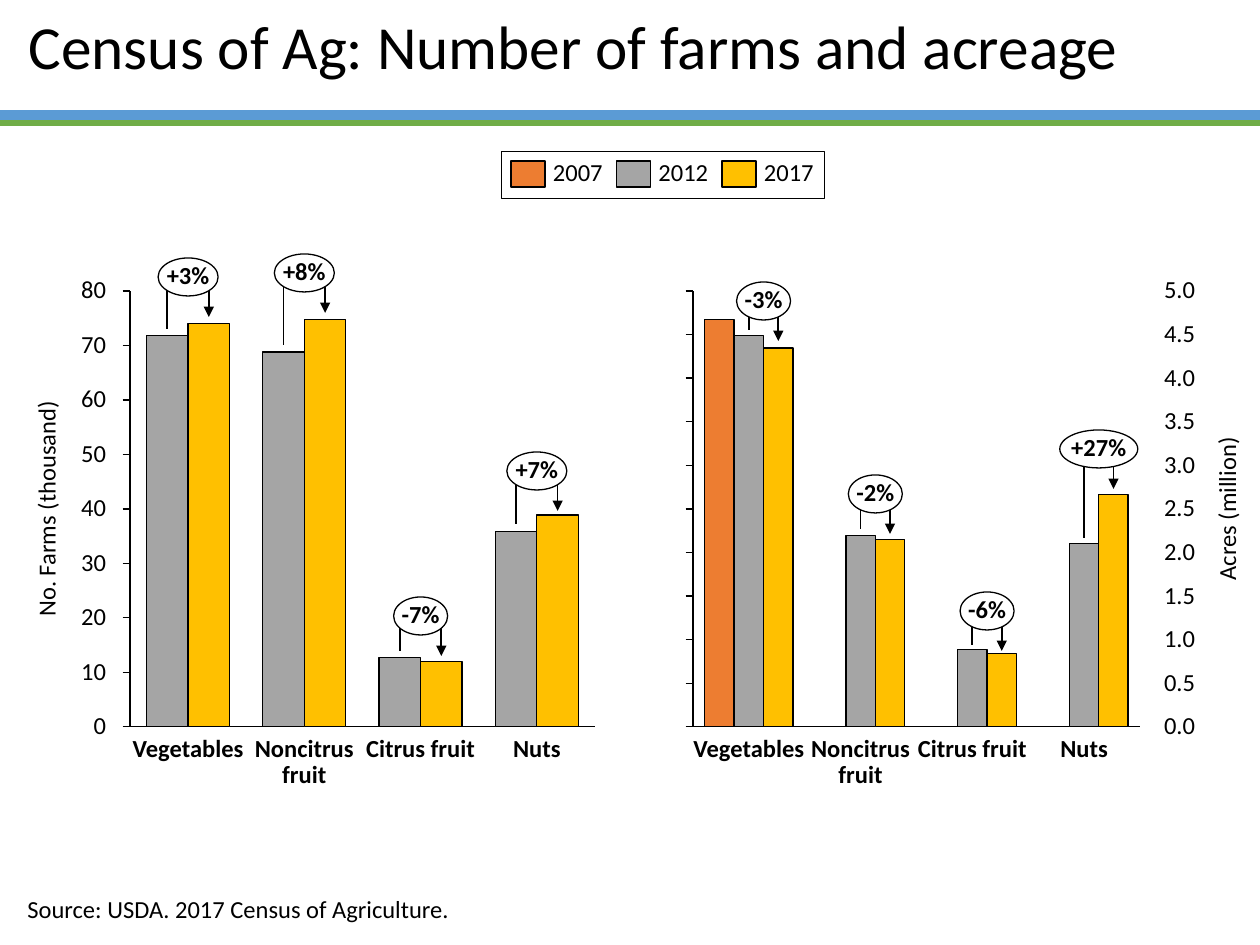
from lxml import etree
from pptx import Presentation
from pptx.chart.data import CategoryChartData
from pptx.dml.color import RGBColor
from pptx.enum.chart import XL_AXIS_CROSSES, XL_CHART_TYPE, XL_TICK_LABEL_POSITION, XL_TICK_MARK
from pptx.enum.shapes import MSO_CONNECTOR, MSO_SHAPE
from pptx.enum.text import MSO_ANCHOR, MSO_AUTO_SIZE, PP_ALIGN
from pptx.oxml.ns import qn
from pptx.util import Pt

LEFT, MID, RIGHT = PP_ALIGN.LEFT, PP_ALIGN.CENTER, PP_ALIGN.RIGHT
TOP, CENTER, BOTTOM = MSO_ANCHOR.TOP, MSO_ANCHOR.MIDDLE, MSO_ANCHOR.BOTTOM
RECT, OVAL = MSO_SHAPE.RECTANGLE, MSO_SHAPE.OVAL
STRAIGHT = MSO_CONNECTOR.STRAIGHT
COLUMN = XL_CHART_TYPE.COLUMN_CLUSTERED
OUT, NONE = XL_TICK_MARK.OUTSIDE, XL_TICK_MARK.NONE
HIDE = XL_TICK_LABEL_POSITION.NONE
FAR = XL_AXIS_CROSSES.MAXIMUM
FIXED = MSO_AUTO_SIZE.NONE

PX = 914400 / 126
INK = {"black": "000000", "white": "FFFFFF", "blue": "5B9BD5", "green": "70AD47",
       "2007": "ED7D31", "2012": "A5A5A5", "2017": "FFC000"}
CROPS = ["Vegetables", "Noncitrus fruit", "Citrus fruit", "Nuts"]
PEAK = 107

FARMS = {
    "series": {"2012": [96, 92, 17, 48], "2017": [99, 100, 16, 52]},
    "major": 13.37, "far": False, "unit": "No. Farms (thousand)",
    "ticks": [str(n) for n in range(0, 90, 10)],
    "calls": [("+3%", 60, 277, 329), ("+8%", 60, 273, 345),
              ("-7%", 54, 616, 651), ("+7%", 60, 471, 524)]}
ACRES = {
    "series": {"2007": [100, None, None, None], "2012": [96, 47, 19, 45],
               "2017": [93, 46, 18, 57]},
    "major": 10.7, "far": True, "unit": "Acres (million)",
    "ticks": [f"{n / 2:.1f}" for n in range(11)],
    "calls": [("-3%", 54, 301, 330), ("-2%", 54, 494, 529),
              ("-6%", 54, 611, 645), ("+27%", 78, 449, 538)]}


def emu(*nums):
    return [round(n * PX) for n in nums]


def rgb(name):
    return RGBColor.from_string(INK[name])


def put(item, vals):
    for key, val in vals.items():
        setattr(item, key, val)


def ink(font, size=14, bold=False):
    put(font, {"name": "Calibri", "size": Pt(size), "bold": bold})
    font.color.rgb = rgb("black")


def edge(line, width=0.75, color="black"):
    line.color.rgb = rgb(color)
    line.width = Pt(width)


def write(shape, text, align=MID, anchor=CENTER, bold=False, wrap=False, pad=0, lead=0.9):
    frame = shape.text_frame
    put(frame, {"text": text, "word_wrap": wrap, "vertical_anchor": anchor,
                **{f"margin_{side}": Pt(pad) for side in ("left", "right")},
                **{f"margin_{side}": Pt(pad / 2) for side in ("top", "bottom")}})
    para = frame.paragraphs[0]
    put(para, {"alignment": align, "line_spacing": lead})
    ink(para.runs[0].font, bold=bold)
    return frame


def label(slide, box, text, **form):
    return write(slide.shapes.add_textbox(*emu(*box)), text, **form)


def block(slide, kind, box, fill=None, width=0.75):
    shape = slide.shapes.add_shape(kind, *emu(*box))
    shape.shadow.inherit = False
    if fill:
        shape.fill.solid()
        shape.fill.fore_color.rgb = rgb(fill)
    else:
        shape.fill.background()
    edge(shape.line, width)
    return shape


def rule(slide, ends, width=1, color="black", arrow=False):
    link = slide.shapes.add_connector(STRAIGHT, *emu(*ends))
    edge(link.line, width, color)
    if arrow:
        etree.SubElement(link.line._get_or_add_ln(), qn("a:tailEnd"), type="triangle")
    etree.SubElement(link._element.spPr, qn("a:effectLst"))


def head(slide, box):
    title = slide.shapes.title
    put(title, dict(zip(("left", "top", "width", "height"), emu(*box))))
    frame = title.text_frame
    put(frame, {"text": "Census of Ag: Number of farms and acreage",
                "auto_size": FIXED, "vertical_anchor": CENTER})
    para = frame.paragraphs[0]
    put(para, {"alignment": LEFT, "line_spacing": 0.9})
    ink(para.runs[0].font, 35)
    for y, width, color in ((115, 6, "blue"), (123, 3, "green")):
        rule(slide, (-1, y, 1262, y), width, color)


def key(slide, box):
    x, y, w, h = box
    block(slide, RECT, box, width=0.25)
    for i, year in enumerate(("2007", "2012", "2017")):
        left = x + 10 + i * 105.5
        block(slide, RECT, (left, y + 10, 34, 26), year)
        label(slide, (left + 42, y + 10, 50, 26), year, align=LEFT)


def inset(chart, box, plot):
    area = chart._chartSpace.chart.plotArea
    for old in area.findall(qn("c:layout")):
        area.remove(old)
    lay = etree.Element(qn("c:layout"))
    area.insert(0, lay)
    hand = etree.SubElement(lay, qn("c:manualLayout"))
    x, y, w, h = box
    share = [(plot[0] - x) / w, (plot[1] - y) / h, plot[2] / w, plot[3] / h]
    parts = [("layoutTarget", "inner"), ("xMode", "edge"), ("yMode", "edge")]
    parts += [(tag, f"{val:.4f}") for tag, val in zip("xywh", share)]
    for tag, val in parts:
        etree.SubElement(hand, qn(f"c:{tag}"), val=val)


def bars(slide, plot, info):
    x, y, w, h = plot
    box = (x - 11, y - 11, w + 22, h + 23)
    data = CategoryChartData()
    data.categories = ["1", "2", "3", "4"]
    for year, vals in info["series"].items():
        data.add_series(year, vals)
    chart = slide.shapes.add_chart(COLUMN, *emu(*box), data).chart
    put(chart, {"has_legend": False, "has_title": False})
    ink(chart.font, 10)
    group = chart.plots[0]
    put(group, {"gap_width": 80, "overlap": 0, "vary_by_categories": False})
    for item in group.series:
        item.format.fill.solid()
        item.format.fill.fore_color.rgb = rgb(item.name)
        edge(item.format.line)
    cat, val = chart.category_axis, chart.value_axis
    for axis, tick in ((cat, NONE), (val, OUT)):
        put(axis, {"has_major_gridlines": False, "major_tick_mark": tick,
                   "minor_tick_mark": NONE, "tick_label_position": HIDE})
        edge(axis.format.line)
    put(val, {"minimum_scale": 0, "maximum_scale": PEAK, "major_unit": info["major"]})
    if info["far"]:
        cat.crosses = FAR
    inset(chart, box, plot)


def scale(slide, plot, info):
    x, y, w, h = plot
    far = info["far"]
    left, align = (x + w + 24, LEFT) if far else (x - 56, RIGHT)
    step = h / (len(info["ticks"]) - 1)
    for i, text in enumerate(info["ticks"]):
        label(slide, (left, y + h - i * step - 13, 32, 26), text, align=align)
    spot = (x + w + 75, y + 146, 26, 144) if far else (x - 95, y + 111, 26, 214)
    frame = label(slide, spot, info["unit"], anchor=TOP if far else BOTTOM)
    frame._txBody.bodyPr.set("vert", "vert270")


def call(slide, x, gap, text, width, level, foot):
    rule(slide, (x, foot, x, level))
    rule(slide, (x, level, x + gap, level))
    rule(slide, (x + gap, level, x + gap, level + 40), arrow=True)
    oval = block(slide, OVAL, (x + gap / 2 - width / 2, level - 19, width, 38), "white")
    write(oval, text, bold=True)


def panel(slide, plot, info):
    x, y, w, h = plot
    bars(slide, plot, info)
    scale(slide, plot, info)
    step = w / len(CROPS)
    count = len(info["series"])
    bar = step / (count + 0.8)
    for i, (crop, mark) in enumerate(zip(CROPS, info["calls"])):
        mid = x + step * (i + 0.5)
        two = " " in crop and crop.startswith("Non")
        wide = 101 if two else 112
        label(slide, (mid - wide / 2, y + h + 9, wide, 53 if two else 26), crop,
              anchor=TOP, bold=True, wrap=two)
        call(slide, mid + bar * (count / 2 - 1.5), bar, *mark)


def main():
    deck = Presentation()
    deck.slide_width, deck.slide_height = emu(1260, 945)
    slide = deck.slides.add_slide(deck.slide_layouts[5])
    head(slide, (16, 8, 1230, 84))
    panel(slide, (130, 291, 465, 436), FARMS)
    panel(slide, (693, 291, 447, 436), ACRES)
    key(slide, (501, 151, 323, 47))
    label(slide, (15, 888, 891, 43), "Source: USDA. 2017 Census of Agriculture.",
          align=LEFT, anchor=TOP, wrap=True, pad=7.2, lead=1.0)
    deck.save("out.pptx")


if __name__ == "__main__":
    main()
